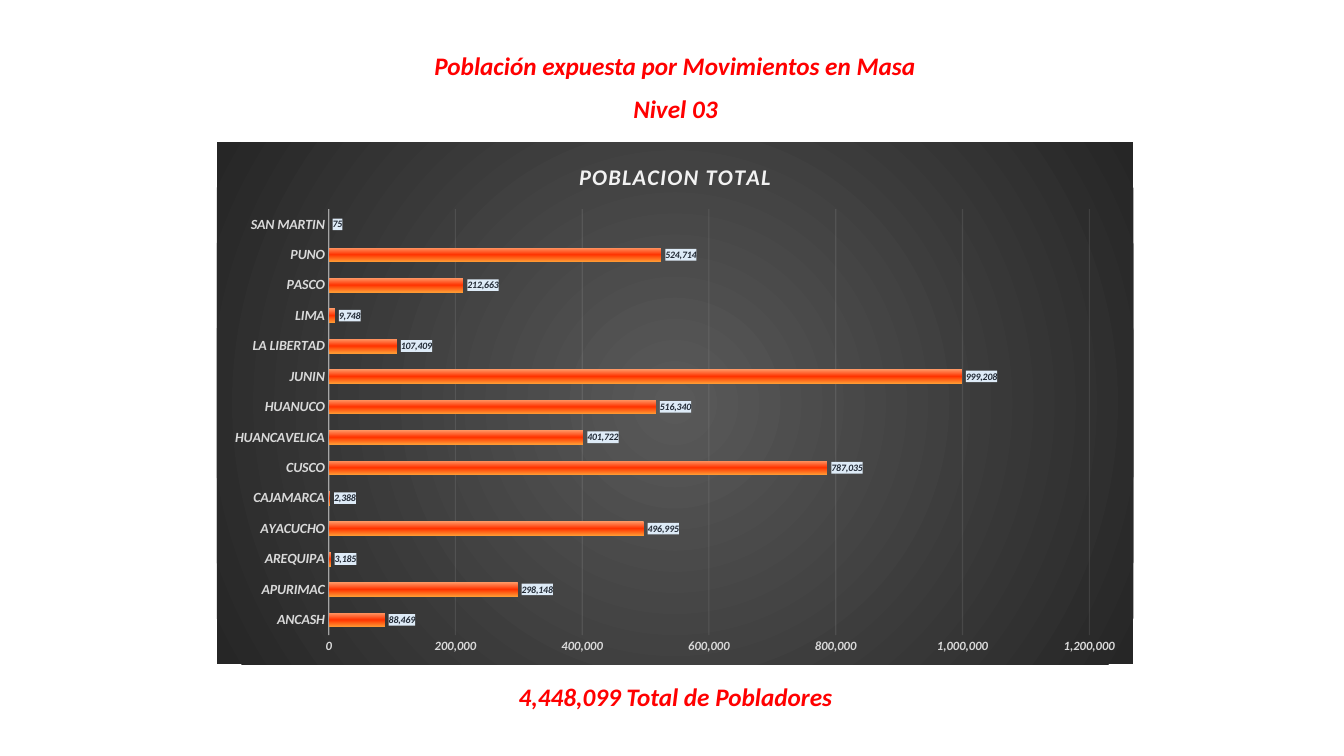
from lxml import etree
from pptx import Presentation
from pptx.chart.data import CategoryChartData as ChartData
from pptx.dml.color import RGBColor as RGB
from pptx.enum.chart import XL_CHART_TYPE as Kind, XL_LABEL_POSITION as Pos, XL_TICK_MARK as Tick
from pptx.enum.text import MSO_AUTO_SIZE as Auto, PP_ALIGN as Align
from pptx.oxml import parse_xml
from pptx.oxml.ns import nsdecls, qn
from pptx.util import Inches, Pt

FONT = "Calibri"
COLORS = {
    "red": "FF0000", "pale": "F2F2F2", "axis": "D9D9D9",
    "label": "222A35", "tag": "DEEBF7",
}
BACK = [(0, "595959"), (100, "262626")]
BARS = [(0, "FF9966"), (50, "FF3300"), (100, "FF9933")]
CIRCLE = '<a:path path="circle"><a:fillToRect l="50000" t="50000" r="50000" b="50000"/></a:path>'
DOWN = '<a:lin ang="5400000" scaled="0"/>'

PEOPLE = {
    "ANCASH": 88469, "APURIMAC": 298148, "AREQUIPA": 3185,
    "AYACUCHO": 496995, "CAJAMARCA": 2388, "CUSCO": 787035,
    "HUANCAVELICA": 401722, "HUANUCO": 516340, "JUNIN": 999208,
    "LA LIBERTAD": 107409, "LIMA": 9748, "PASCO": 212663,
    "PUNO": 524714, "SAN MARTIN": 75,
}
LINES = [
    ("Población expuesta por Movimientos en Masa", 4.18, 0.45, 5.03, False),
    ("Nivel 03", 6.15, 0.88, 1.1, True),
    ("4,448,099 Total de Pobladores", 5.02, 6.71, 3.36, True),
]


def style(font, size, color):
    font.name, font.size = FONT, Pt(size)
    font.bold = font.italic = True
    font.color.rgb = RGB.from_string(COLORS[color])


def add_line(slide, text, left, top, width, wrap):
    box = slide.shapes.add_textbox(Inches(left), Inches(top), Inches(width), Inches(0.4))
    frame = box.text_frame
    frame.word_wrap = wrap
    frame.auto_size = Auto.SHAPE_TO_FIT_TEXT
    para = frame.paragraphs[0]
    para.text, para.alignment = text, Align.CENTER
    style(para.font, 18, "red")


def shape_props(fill):
    return parse_xml(f'<c:spPr {nsdecls("c", "a")}>{fill}<a:ln><a:noFill/></a:ln></c:spPr>')


def blend(stops, way):
    marks = "".join(
        f'<a:gs pos="{pos * 1000}"><a:srgbClr val="{color}"/></a:gs>' for pos, color in stops)
    return f'<a:gradFill rotWithShape="1"><a:gsLst>{marks}</a:gsLst>{way}</a:gradFill>'


def set_line(line, width, alpha):
    line.width = Pt(width)
    line.color.rgb = RGB.from_string(COLORS["pale"])
    color = line.fill._xPr.find(".//" + qn("a:srgbClr"))
    etree.SubElement(color, qn("a:alpha")).set("val", str(alpha * 1000))


def set_axes(chart):
    cat, val = chart.category_axis, chart.value_axis
    for axis, size in ((cat, 10), (val, 9)):
        axis.major_tick_mark = axis.minor_tick_mark = Tick.NONE
        style(axis.tick_labels.font, size, "axis")
    set_line(cat.format.line, 1, 54)
    val.minimum_scale, val.maximum_scale, val.major_unit = 0, 1200000, 200000
    val.format.line.fill.background()
    val.has_major_gridlines = True
    set_line(val.major_gridlines.format.line, 0.75, 10)
    val.tick_labels.number_format = "#,##0"
    val.tick_labels.number_format_is_linked = False


def set_title(chart):
    chart.has_title = True
    para = chart.chart_title.text_frame.paragraphs[0]
    para.text = "POBLACION TOTAL"
    style(para.font, 16, "pale")
    para.font._element.set("spc", "100")
    chart.chart_title.include_in_layout = False


def set_bars(plot):
    plot.gap_width, plot.overlap, plot.vary_by_categories = 115, -20, False
    bars = plot.series[0]
    bars.invert_if_negative = False
    props = bars._element.get_or_add_spPr()
    props.getparent().replace(props, shape_props(blend(BARS, DOWN)))

    # Value tags
    tags = bars.data_labels
    tags.show_value, tags.position = True, Pos.OUTSIDE_END
    tags.number_format, tags.number_format_is_linked = "#,##0", False
    style(tags.font, 7, "label")
    fill = f'<a:solidFill><a:srgbClr val="{COLORS["tag"]}"/></a:solidFill>'
    tags._element.find(qn("c:txPr")).addprevious(shape_props(fill))


def add_bars(slide):
    data = ChartData(number_format="#,##0")
    data.categories = list(PEOPLE)
    data.add_series("POBLACION TOTAL", list(PEOPLE.values()))
    chart = slide.shapes.add_chart(
        Kind.BAR_CLUSTERED, Inches(2.15), Inches(1.41), Inches(9.09), Inches(5.18), data).chart
    chart.has_legend = False
    chart.font.name, chart.font.size = FONT, Pt(10)
    chart._chartSpace.find(qn("c:chart")).addnext(shape_props(blend(BACK, CIRCLE)))
    set_title(chart)
    set_axes(chart)
    set_bars(chart.plots[0])


def main():
    deck = Presentation()
    deck.slide_width, deck.slide_height = Inches(13.33), Inches(7.5)
    slide = deck.slides.add_slide(deck.slide_layouts[6])
    # Headings and total
    for line in LINES:
        add_line(slide, *line)
    # Population by region
    add_bars(slide)
    deck.save("out.pptx")


if __name__ == "__main__":
    main()
